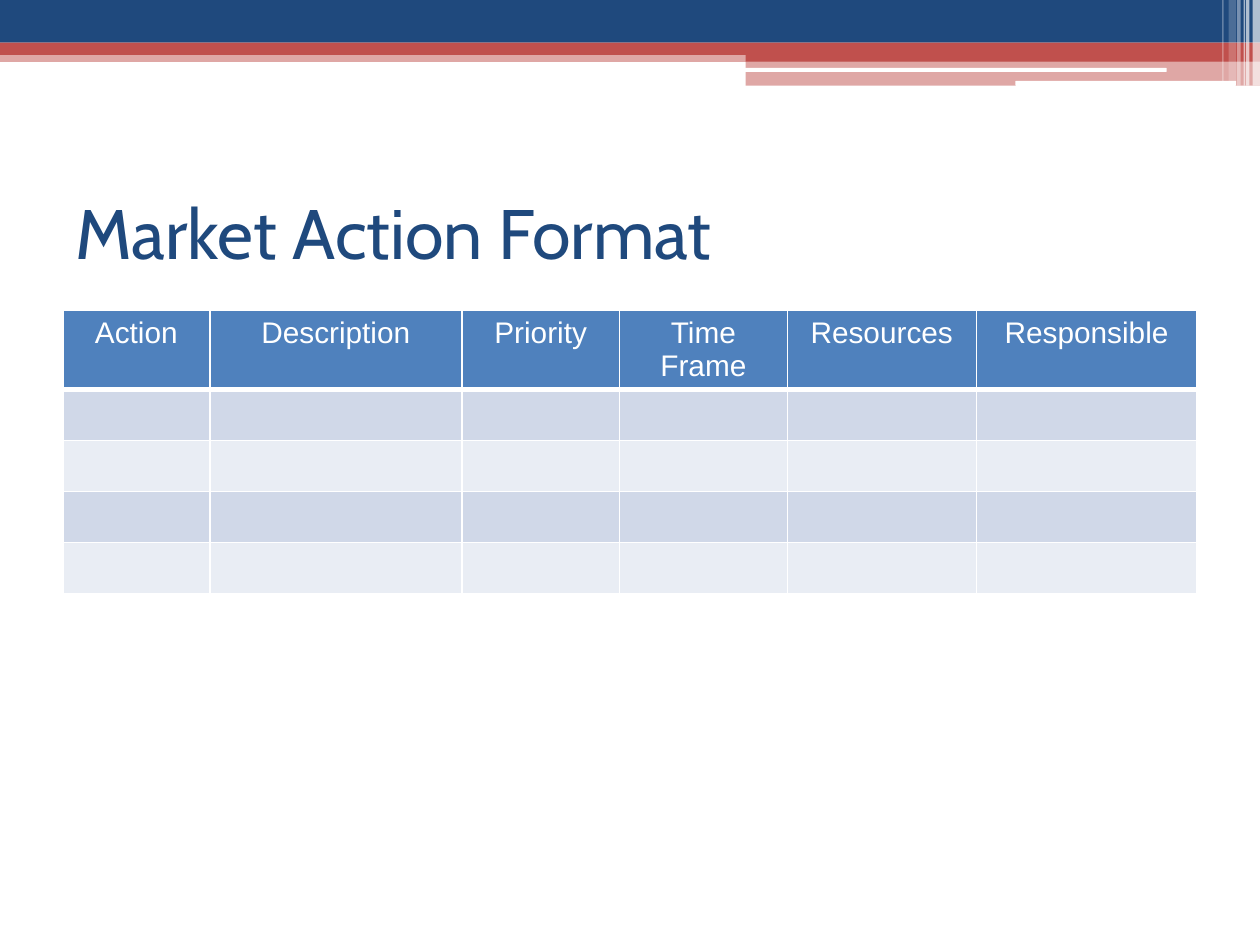
"""Build the Market Action Format slide with its banner and blank planning table."""
import dataclasses

import lxml.etree
import pptx
import pptx.dml.color
import pptx.enum.shapes
import pptx.enum.text
import pptx.oxml.ns
import pptx.util

Cm = pptx.util.Cm
Pt = pptx.util.Pt
qn = pptx.oxml.ns.qn
SHAPES = pptx.enum.shapes.MSO_SHAPE
ALIGN = pptx.enum.text.PP_ALIGN


@dataclasses.dataclass(frozen=True)
class Theme:
    navy: str = "1F497D"
    red: str = "C0504D"
    white: str = "FFFFFF"
    header: str = "4F81BD"
    bands: tuple = ("D0D8E8", "E9EDF4")
    title_font: str = "Cabin"
    table_font: str = "Arial"
    title_size: int = 40
    table_size: int = 17


class PageBuilder:
    def __init__(self, page, theme):
        self.page = page
        self.theme = theme

    def paint(self, target, color, opacity=100):
        target.fill.solid()
        target.fill.fore_color.rgb = pptx.dml.color.RGBColor.from_string(color)
        if opacity < 100:
            tint = target.fill._xPr.find(".//" + qn("a:srgbClr"))
            lxml.etree.SubElement(tint, qn("a:alpha"), val=str(opacity * 1000))

    def format_text(self, frame, font, size, color, align):
        for para in frame.paragraphs:
            para.alignment = align
            for span in para.runs:
                span.font.name = font
                span.font.size = Pt(size)
                span.font.color.rgb = pptx.dml.color.RGBColor.from_string(color)

    def bar(self, left, top, width, height, color, opacity=100, kind=SHAPES.RECTANGLE):
        box = self.page.shapes.add_shape(kind, Cm(left), Cm(top), Cm(width), Cm(height))
        box.shadow.inherit = False
        box.line.fill.background()
        self.paint(box, color, opacity)

    def title(self, text, left, top, width, height):
        box = self.page.shapes.title
        box.left, box.top, box.width, box.height = Cm(left), Cm(top), Cm(width), Cm(height)
        frame = box.text_frame
        frame.text = text
        frame.vertical_anchor = pptx.enum.text.MSO_ANCHOR.MIDDLE
        theme = self.theme
        self.format_text(frame, theme.title_font, theme.title_size, theme.navy, ALIGN.LEFT)

    def border(self, cell, bottom):
        properties = cell._tc.get_or_add_tcPr()
        edges = {"lnL": 1, "lnR": 1, "lnT": 1, "lnB": bottom}
        for position, (edge, width) in enumerate(edges.items()):
            line = lxml.etree.Element(qn("a:" + edge), w=str(Pt(width)))
            fill = lxml.etree.SubElement(line, qn("a:solidFill"))
            lxml.etree.SubElement(fill, qn("a:srgbClr"), val=self.theme.white)
            properties.insert(position, line)

    def table(self, headings, widths, blank_rows, left, top, header_height, row_height):
        theme = self.theme
        height = header_height + blank_rows * row_height
        table = self.page.shapes.add_table(
            blank_rows + 1, len(headings), Cm(left), Cm(top), Cm(sum(widths)), Cm(height)
        ).table
        for column, width in zip(table.columns, widths):
            column.width = Cm(width)
        for index, row in enumerate(table.rows):
            row.height = Cm(row_height if index else header_height)
            for cell in row.cells:
                self.paint(cell, theme.bands[(index - 1) % 2] if index else theme.header)
                self.border(cell, bottom=1 if index else 3)
        for cell, heading in zip(table.rows[0].cells, headings):
            cell.text_frame.text = heading
            self.format_text(
                cell.text_frame, theme.table_font, theme.table_size, theme.white, ALIGN.CENTER
            )


def main():
    deck = pptx.Presentation()
    deck.slide_width, deck.slide_height = Cm(25.4), Cm(19.05)
    theme = Theme()
    builder = PageBuilder(deck.slides.add_slide(deck.slide_layouts[5]), theme)

    builder.bar(0, 1.02, 25.4, 0.23, theme.red, 50)
    builder.bar(0, 0, 25.4, 0.86, theme.navy)
    builder.bar(0, 0.86, 25.4, 0.25, theme.red)
    builder.bar(15.03, 0.99, 10.37, 0.25, theme.red)
    builder.bar(15.03, 1.23, 10.37, 0.5, theme.red, 50)
    for left, top, width, height in ((15.01, 1.37, 8.51, 0.08), (20.47, 1.63, 4.45, 0.1)):
        builder.bar(left, top, width, height, theme.white, kind=SHAPES.ROUNDED_RECTANGLE)
    stripes = (
        (25.25, 0.15, 1.73, 65),
        (25.12, 0.07, 1.73, 65),
        (25.07, 0.03, 1.73, 60),
        (24.94, 0.07, 1.73, 40),
        (24.77, 0.15, 1.63, 20),
        (24.64, 0.03, 1.63, 30),
    )
    for left, width, height, opacity in stripes:
        builder.bar(left, 0, width, height, theme.white, opacity)

    builder.title("Market Action Format", 1.27, 3.18, 22.86, 2.97)
    builder.table(
        ("Action", "Description", "Priority", "Time\nFrame", "Resources", "Responsible"),
        (2.96, 5.08, 3.18, 3.38, 3.81, 4.45),
        blank_rows=4, left=1.27, top=6.25, header_height=1.6, row_height=1.03,
    )
    deck.save("out.pptx")


if __name__ == "__main__":
    main()
